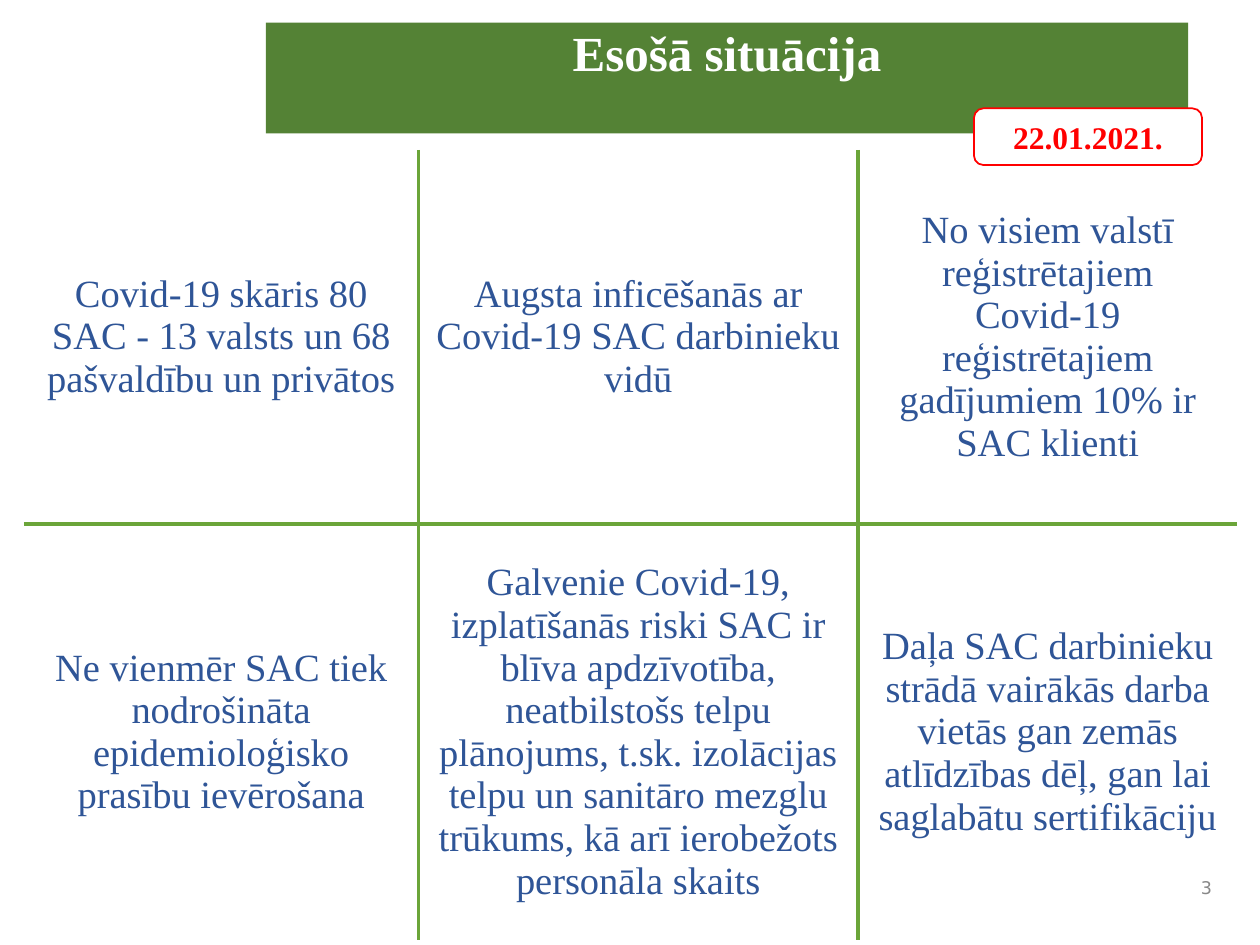
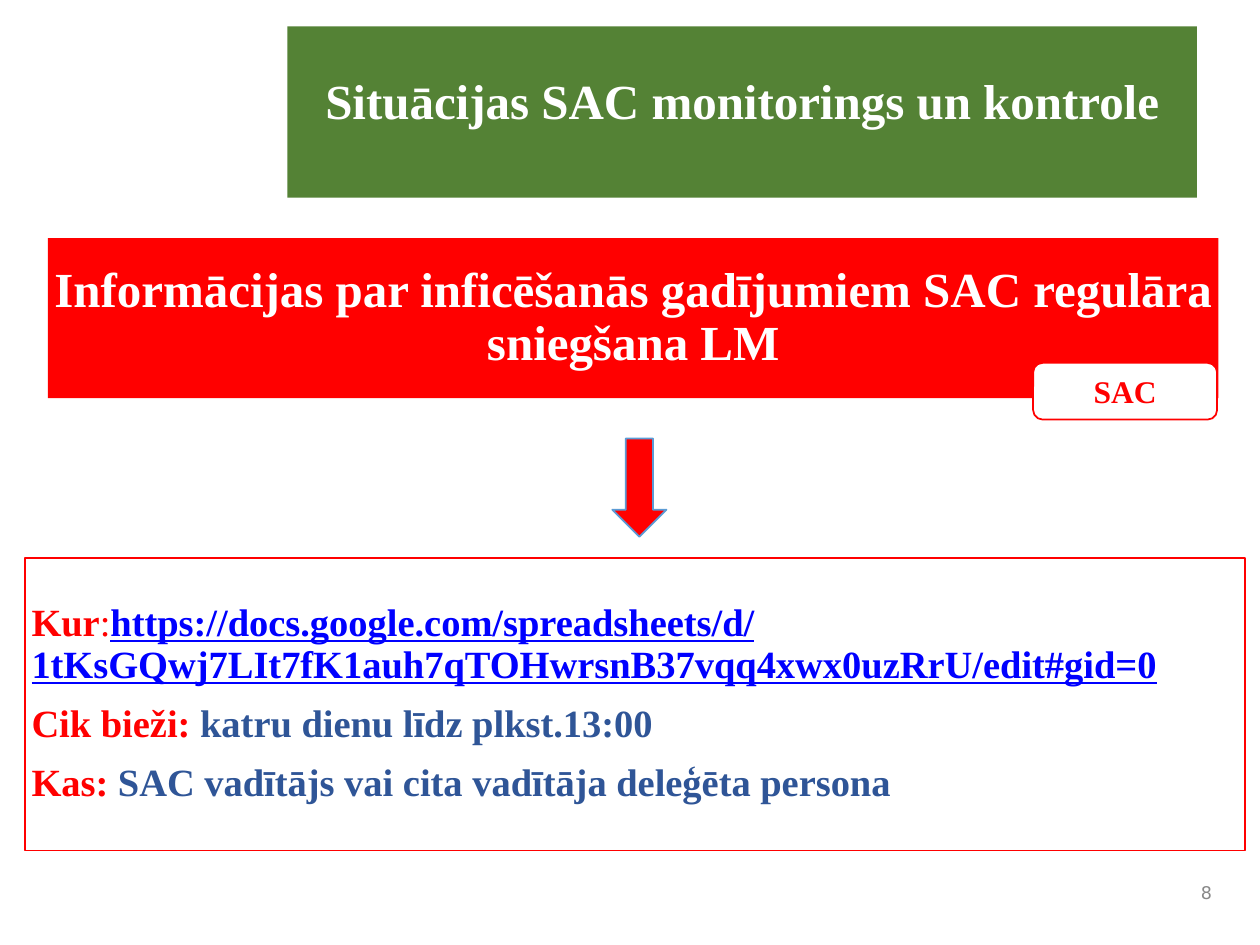
import pptx
import pptx.dml.color
import pptx.enum.shapes
import pptx.enum.text
import pptx.oxml
import pptx.oxml.ns
import pptx.util
from pptx.util import Inches

COLORS = {"green": "548235", "grid": "6BA539", "red": "FF0000", "blue": "2F5597",
          "link": "0000FF", "white": "FFFFFF", "gray": "888888", "arrow edge": "5B9BD5"}
SERIF = "Times New Roman"
CENTER = pptx.enum.text.PP_ALIGN.CENTER
LEFT = pptx.enum.text.PP_ALIGN.LEFT
RIGHT = pptx.enum.text.PP_ALIGN.RIGHT
TOP = pptx.enum.text.MSO_ANCHOR.TOP
MIDDLE = pptx.enum.text.MSO_ANCHOR.MIDDLE
SHAPES = pptx.enum.shapes.MSO_SHAPE


def rgb(name):
    return pptx.dml.color.RGBColor.from_string(COLORS[name])


def write(frame, paragraphs, size=28, color="white", bold=True, font=SERIF,
          align=CENTER, anchor=MIDDLE, spacing=1.0, gap=0, inset=0.05, top=0.05):
    """Fill a frame; each paragraph is a string or a list of (text, run format) pairs."""
    frame.word_wrap = True
    frame.auto_size = pptx.enum.text.MSO_AUTO_SIZE.NONE
    frame.vertical_anchor = anchor
    frame.margin_left = frame.margin_right = Inches(inset)
    frame.margin_top, frame.margin_bottom = Inches(top), Inches(0.05)
    for index, runs in enumerate(paragraphs):
        paragraph = frame.add_paragraph() if index else frame.paragraphs[0]
        properties = paragraph._p.get_or_add_pPr()
        properties.set("marL", "0")
        properties.set("indent", "0")
        properties.append(pptx.oxml.parse_xml(
            f'<a:buNone {pptx.oxml.ns.nsdecls("a")}/>'))
        paragraph.alignment = align
        paragraph.line_spacing = spacing
        paragraph.space_before = pptx.util.Pt(gap if index else 0)
        for text, look in ([(runs, {})] if isinstance(runs, str) else runs):
            run = paragraph.add_run()
            run.text = text
            run.font.name = font
            run.font.size = pptx.util.Pt(size)
            run.font.bold = look.get("bold", bold)
            run.font.underline = look.get("underline", False)
            run.font.color.rgb = rgb(look.get("color", color))


deck = pptx.Presentation()
deck.slide_width, deck.slide_height = Inches(10), Inches(7.5)

# Title band, corner badge and page number on each slide
pages = [
    dict(layout=5, title="Esošā situācija", band=(2.11, 0.18, 7.32, 0.88), title_top=0.05,
         badge="22.01.2021.", badge_box=(7.73, 0.86, 1.81, 0.45),
         number="3", number_box=(9.17, 6.92, 0.5, 0.24)),
    dict(layout=1, title="Situācijas SAC monitorings un kontrole",
         band=(2.28, 0.21, 7.22, 1.36), title_top=0.4,
         badge="SAC", badge_box=(8.2, 2.88, 1.46, 0.45),
         number="8", number_box=(9.17, 6.92, 0.5, 0.33)),
]
slides = []
for page in pages:
    slide = deck.slides.add_slide(deck.slide_layouts[page["layout"]])
    slides.append(slide)

    title = slide.shapes.title
    title.left, title.top, title.width, title.height = map(Inches, page["band"])
    title.fill.solid()
    title.fill.fore_color.rgb = rgb("green")
    write(title.text_frame, [page["title"]], anchor=TOP, spacing=0.9, top=page["title_top"])

    badge = slide.shapes.add_shape(SHAPES.ROUNDED_RECTANGLE, *map(Inches, page["badge_box"]))
    badge.shadow.inherit = False
    badge.fill.solid()
    badge.fill.fore_color.rgb = rgb("white")
    badge.line.color.rgb = rgb("red")
    badge.line.width = pptx.util.Pt(1)
    write(badge.text_frame, [page["badge"]], size=18, color="red")

    number = slide.shapes.add_textbox(*map(Inches, page["number_box"]))
    write(number.text_frame, [page["number"]], size=10, color="gray", bold=False,
          font="DejaVu Sans", align=RIGHT)

situation, monitoring = slides

# Current situation: six facts separated by inner grid lines
facts = [
    ["Covid-19 skāris 80 SAC - 13 valsts un 68 pašvaldību un privātos",
     "Augsta inficēšanās ar Covid-19 SAC darbinieku vidū",
     "No visiem valstī reģistrētajiem Covid-19 reģistrētajiem gadījumiem 10% ir SAC klienti"],
    ["Ne vienmēr SAC tiek nodrošināta epidemioloģisko prasību ievērošana",
     "Galvenie Covid-19, izplatīšanās riski SAC ir blīva apdzīvotība, neatbilstošs telpu "
     "plānojums, t.sk. izolācijas telpu un sanitāro mezglu trūkums, kā arī ierobežots "
     "personāla skaits",
     "Daļa SAC darbinieku strādā vairākās darba vietās gan zemās atlīdzības dēļ, "
     "gan lai saglabātu sertifikāciju"],
]
grid = situation.shapes.add_table(2, 3, *map(Inches, (0.19, 1.19, 9.63, 6.27))).table
grid.first_row = grid.horz_banding = False
for column, width in zip(grid.columns, (3.13, 3.49, 3.01)):
    column.width = Inches(width)
for row, height in zip(grid.rows, (2.97, 3.3)):
    row.height = Inches(height)
for r, row_facts in enumerate(facts):
    for c, fact in enumerate(row_facts):
        cell = grid.cell(r, c)
        cell.fill.background()
        cell.vertical_anchor = MIDDLE
        write(cell.text_frame, [fact], size=22, color="blue", bold=False)
        cell.margin_left = cell.margin_right = Inches(0.1)
        cell.margin_top = cell.margin_bottom = Inches(0.05)
        cell_properties = cell._tc.get_or_add_tcPr()
        for child in cell_properties.findall(pptx.oxml.ns.qn("a:bodyPr")):
            cell_properties.remove(child)
        inner = {"L": c > 0, "R": c < 2, "T": r > 0, "B": r < 1}
        for position, side in enumerate(inner):
            paint = (f'<a:solidFill><a:srgbClr val="{COLORS["grid"]}"/></a:solidFill>'
                     if inner[side] else "<a:noFill/>")
            cell_properties.insert(position, pptx.oxml.parse_xml(
                f'<a:ln{side} {pptx.oxml.ns.nsdecls("a")} w="{pptx.util.Pt(2.25)}">'
                f"{paint}</a:ln{side}>"))

# Monitoring: the duty, an arrow, and how to report
duty = monitoring.placeholders[1]
duty.left, duty.top, duty.width, duty.height = map(Inches, (0.38, 1.89, 9.29, 1.27))
duty.fill.solid()
duty.fill.fore_color.rgb = rgb("red")
write(duty.text_frame,
      ["Informācijas par inficēšanās gadījumiem SAC regulāra sniegšana LM"], spacing=0.9)

reporting = monitoring.shapes.add_shape(SHAPES.RECTANGLE, *map(Inches, (0.2, 4.43, 9.68, 2.32)))
reporting.shadow.inherit = False
reporting.fill.background()
reporting.line.color.rgb = rgb("red")
reporting.line.width = pptx.util.Pt(1)
label = {"color": "red"}
write(reporting.text_frame, [
    [("Kur", label), (":", {"color": "red", "bold": False}),
     ("https://docs.google.com/spreadsheets/d/"
      "1tKsGQwj7LIt7fK1auh7qTOHwrsnB37vqq4xwx0uzRrU/edit#gid=0",
      {"color": "link", "underline": True})],
    [("Cik bieži: ", label), ("katru dienu līdz plkst.13:00", {})],
    [("Kas: ", label), ("SAC vadītājs vai cita vadītāja deleģēta persona", {})],
], size=22, color="blue", align=LEFT, spacing=0.9, gap=10)

arrow = monitoring.shapes.add_shape(SHAPES.DOWN_ARROW, *map(Inches, (4.86, 3.48, 0.43, 0.78)))
arrow.shadow.inherit = False
arrow.fill.solid()
arrow.fill.fore_color.rgb = rgb("red")
arrow.line.color.rgb = rgb("arrow edge")
arrow.line.width = pptx.util.Pt(1)

deck.save("out.pptx")
